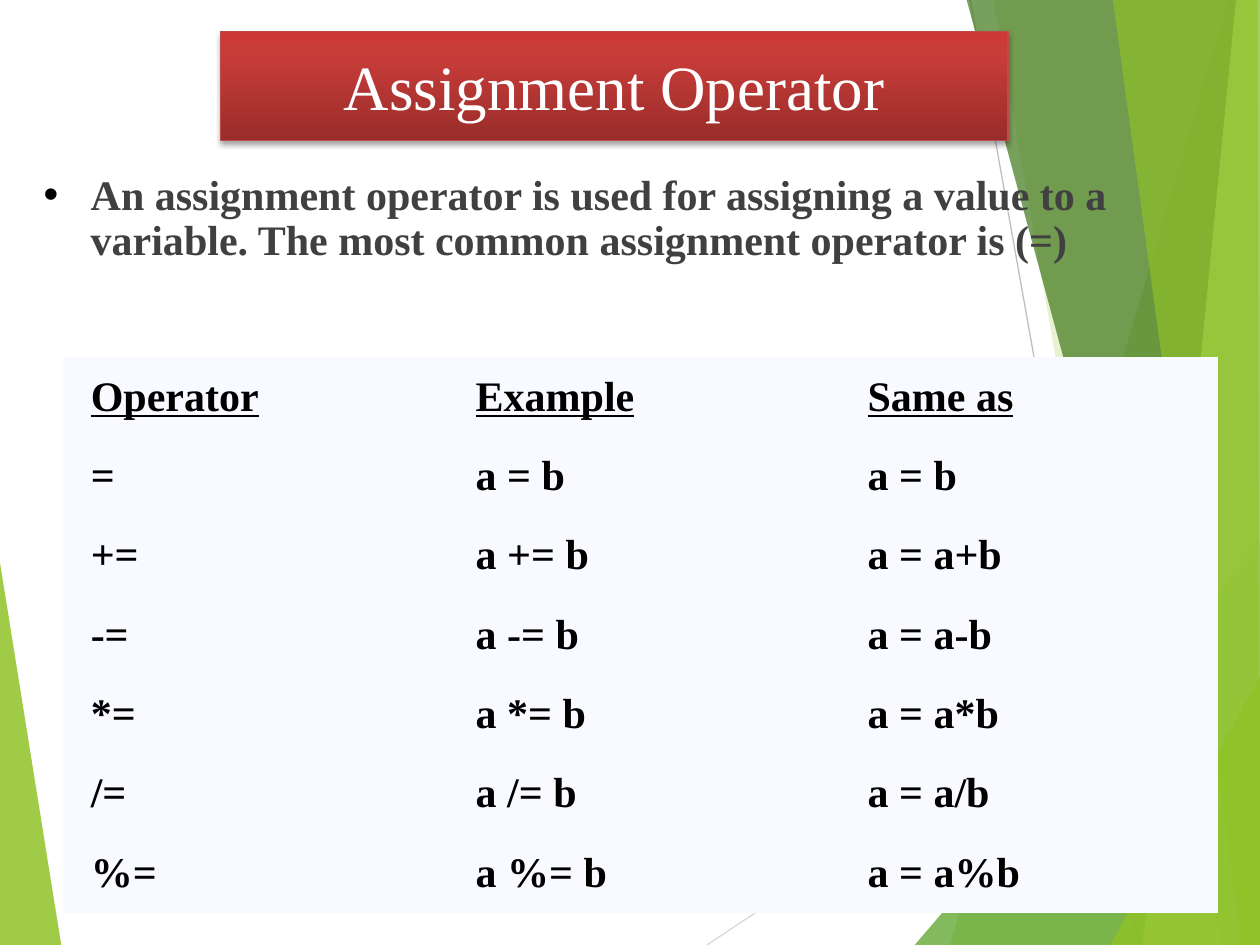
from dataclasses import dataclass

from lxml import etree
from pptx import Presentation
from pptx import util as u
from pptx.dml.color import RGBColor
from pptx.enum import shapes, text
from pptx.oxml import parse_xml
from pptx.oxml.ns import nsdecls, qn


@dataclass(frozen=True)
class Theme:
    font: str = "Times New Roman"
    title_size: int = 36
    body_size: int = 24
    white: str = "FFFFFF"
    black: str = "000000"
    body: str = "404040"
    lime: str = "90C226"
    pale_lime: str = "C0E474"
    green: str = "54A021"
    dark_green: str = "3F7819"
    light_grey: str = "D9D9D9"
    grey: str = "BFBFBF"
    cell: str = "F8FAFF"
    title_line: str = "BD4B48"
    title_stops: tuple = ((0, "992D2B"), (80, "C93D39"), (100, "CD3A36"))
    no_grid: str = "{2D5ABB26-0587-4C30-8999-92F81FD0307C}"


class SlideBuilder:
    def __init__(self, slide, theme):
        self.slide = slide
        self.theme = theme

    def run(self, paragraph, words, size, color, bold=False, underline=False):
        run = paragraph.add_run()
        run.text = words
        font = run.font
        font.name, font.size = self.theme.font, u.Pt(size)
        font.bold, font.underline = bold, underline
        font.color.rgb = RGBColor.from_string(color)

    def facet(self, points, color, opacity):
        corners = [(u.Cm(x), u.Cm(y)) for x, y in points]
        outline = self.slide.shapes.build_freeform(*corners[0])
        outline.add_line_segments(corners[1:], close=True)
        facet = outline.convert_to_shape()
        facet.shadow.inherit = False
        facet.line.fill.background()
        facet.fill.solid()
        facet.fill.fore_color.rgb = RGBColor.from_string(color)
        tint = facet.fill._xPr.find(qn("a:solidFill"))[0]
        etree.SubElement(tint, qn("a:alpha")).set("val", str(opacity * 1000))

    def line(self, start, end, color):
        ends = [u.Cm(v) for v in (*start, *end)]
        line = self.slide.shapes.add_connector(shapes.MSO_CONNECTOR.STRAIGHT, *ends)
        line.line.width = u.Pt(0.75)
        line.line.color.rgb = RGBColor.from_string(color)
        etree.SubElement(line._element.spPr, qn("a:effectLst"))

    def title(self, box, words):
        theme = self.theme
        title = self.slide.shapes.add_shape(
            shapes.MSO_SHAPE.RECTANGLE, *[u.Cm(v) for v in box])
        title.line.width = u.Pt(0.75)
        title.line.color.rgb = RGBColor.from_string(theme.title_line)
        stops = "".join(
            f'<a:gs pos="{at * 1000}"><a:srgbClr val="{color}"/></a:gs>'
            for at, color in theme.title_stops)
        properties = title._element.spPr
        properties.find(qn("a:ln")).addprevious(parse_xml(
            f'<a:gradFill {nsdecls("a")} rotWithShape="1"><a:gsLst>{stops}</a:gsLst>'
            '<a:lin ang="16200000" scaled="0"/></a:gradFill>'))
        properties.append(parse_xml(
            f'<a:effectLst {nsdecls("a")}><a:outerShdw blurRad="{u.Pt(3.1)}" '
            f'dist="{u.Pt(1.8)}" dir="5400000" rotWithShape="0">'
            f'<a:srgbClr val="{theme.black}"><a:alpha val="35000"/></a:srgbClr>'
            '</a:outerShdw></a:effectLst>'))
        frame = title.text_frame
        frame.vertical_anchor = text.MSO_ANCHOR.MIDDLE
        frame.paragraphs[0].alignment = text.PP_ALIGN.CENTER
        self.run(frame.paragraphs[0], words, theme.title_size, theme.white)

    def bullet(self, box, words):
        theme = self.theme
        frame = self.slide.shapes.add_textbox(*[u.Cm(v) for v in box]).text_frame
        frame.word_wrap = True
        paragraph = frame.paragraphs[0]
        paragraph.line_spacing = 0.9
        self.run(paragraph, words, theme.body_size, theme.body, bold=True)
        layout = paragraph._p.get_or_add_pPr()
        layout.set("marL", str(u.Cm(0.95)))
        layout.set("indent", str(-u.Cm(0.95)))
        color = etree.SubElement(layout, qn("a:buClr"))
        etree.SubElement(color, qn("a:srgbClr")).set("val", theme.black)
        etree.SubElement(layout, qn("a:buFont")).set("typeface", "Arial")
        etree.SubElement(layout, qn("a:buChar")).set("char", "•")

    def table(self, left, top, widths, row_height, rows):
        theme = self.theme
        table = self.slide.shapes.add_table(
            len(rows), len(widths), u.Cm(left), u.Cm(top),
            u.Cm(sum(widths)), u.Cm(row_height * len(rows))).table
        table._tbl.tblPr.find(qn("a:tableStyleId")).text = theme.no_grid
        for column, width in zip(table.columns, widths):
            column.width = u.Cm(width)
        for r, row in enumerate(rows):
            table.rows[r].height = u.Cm(row_height)
            for c, words in enumerate(row):
                cell = table.cell(r, c)
                cell.fill.solid()
                cell.fill.fore_color.rgb = RGBColor.from_string(theme.cell)
                cell.vertical_anchor = text.MSO_ANCHOR.MIDDLE
                cell.margin_left = cell.margin_right = u.Cm(0.56)
                cell.margin_top = cell.margin_bottom = u.Cm(0.28)
                self.run(cell.text_frame.paragraphs[0], words, theme.body_size,
                         theme.black, bold=True, underline=r == 0)


def main():
    theme = Theme()
    deck = Presentation()
    deck.slide_width, deck.slide_height = u.Cm(25.4), u.Cm(19.05)
    builder = SlideBuilder(deck.slides.add_slide(deck.slide_layouts[6]), theme)

    # Background facets
    top, bottom, right = -0.03, 19.05, 25.43

    def band(top_x, bottom_x):
        return [(top_x, top), (bottom_x, bottom), (right, bottom), (right, top)]

    def corner(bottom_x, right_y):
        return [(bottom_x, bottom), (right, right_y), (right, bottom)]

    builder.facet([(-0.03, 11.15), (1.24, 19.08), (-0.03, bottom)], theme.lime, 85)
    builder.line((14.25, bottom), (right, 11.61), theme.light_grey)
    builder.line((19.56, 0), (22.96, bottom), theme.grey)
    for points, color, opacity in (
        (band(24.77, 19.15), theme.lime, 30),
        (band(20.02, 23.34), theme.lime, 20),
        (corner(18.44, 10.9), theme.green, 72),
        (band(19.48, 24.64), theme.dark_green, 70),
        (band(24.92, 23.04), theme.pale_lime, 70),
        ([(22.43, top), (25.04, bottom), (25.4, bottom), (25.35, top)], theme.lime, 65),
        (corner(22.38, 13.59), theme.lime, 80),
    ):
        builder.facet(points, color, opacity)

    # Title and definition
    builder.title((4.44, 0.63, 15.88, 2.2), "Assignment Operator")
    builder.bullet(
        (0.63, 3.39, 24.13, 3.81),
        "An assignment operator is used for assigning a value to a variable. "
        "The most common assignment operator is (=)")

    # Operator table
    operators = [("=", "b"), ("+=", "a+b"), ("-=", "a-b"), ("*=", "a*b"),
                 ("/=", "a/b"), ("%=", "a%b")]
    rows = [("Operator", "Example", "Same as")]
    rows += [(sign, f"a {sign} b", f"a = {result}") for sign, result in operators]
    builder.table(1.27, 7.2, (7.76, 7.9, 7.62), 1.6, rows)

    deck.save("out.pptx")


if __name__ == "__main__":
    main()
